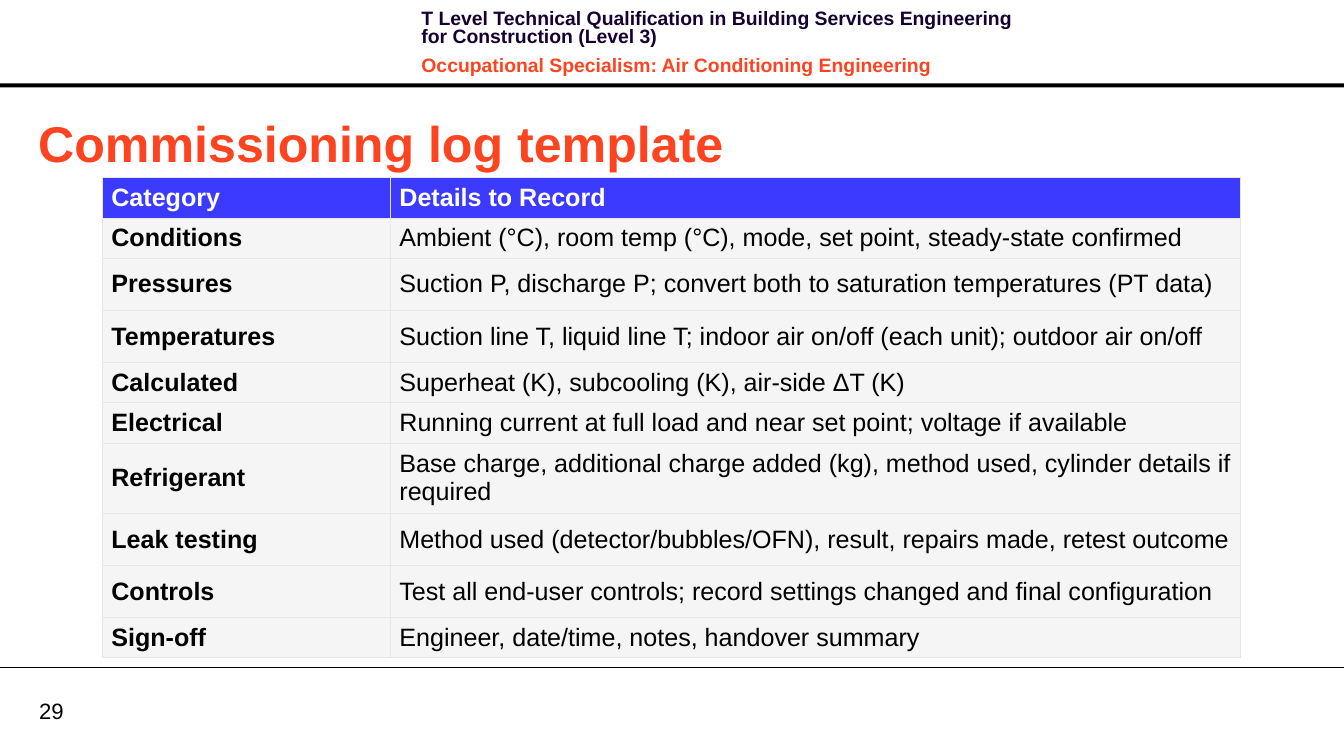
"""Build the commissioning log template slide."""
from dataclasses import dataclass

from lxml.etree import SubElement
from pptx import Presentation
from pptx.dml.color import RGBColor as RGB
from pptx.enum.shapes import MSO_CONNECTOR as CONNECTOR, MSO_SHAPE as SHAPE
from pptx.enum.text import MSO_ANCHOR as ANCHOR, MSO_AUTO_SIZE as AUTO, PP_ALIGN as ALIGN
from pptx.oxml import parse_xml
from pptx.oxml.ns import nsdecls, qn
from pptx.util import Pt

PX = 9144
WIDTH, HEIGHT = 1339, 748


@dataclass(frozen=True)
class Theme:
    """Colours and type sizes of the slide."""
    font: str = "Arial"
    black: str = "000000"
    white: str = "FFFFFF"
    navy: str = "170130"
    orange: str = "FC4421"
    blue: str = "3C3AFE"
    grey: str = "F5F5F5"
    border: str = "E6E6E6"
    title_size: float = 36
    table_size: float = 18
    number_size: float = 15.9
    header_size: float = 13.9


@dataclass(frozen=True)
class Box:
    """A rectangle in px."""
    left: int
    top: int
    width: int
    height: int

    def emu(self) -> tuple[int, int, int, int]:
        """Return the rectangle in EMU."""
        return self.left * PX, self.top * PX, self.width * PX, self.height * PX


@dataclass(frozen=True)
class LogRow:
    """One row of the log table."""
    category: str
    details: str
    height: int = 36


THEME = Theme()
COLUMNS = (287, 847)
LOG = (
    LogRow("Category", "Details to Record"),
    LogRow("Conditions", "Ambient (°C), room temp (°C), mode, set point, steady‑state confirmed"),
    LogRow("Pressures", "Suction P, discharge P; convert both to saturation temperatures (PT data)", 52),
    LogRow("Temperatures",
           "Suction line T, liquid line T; indoor air on/off (each unit); outdoor air on/off", 52),
    LogRow("Calculated", "Superheat (K), subcooling (K), air‑side ΔT (K)"),
    LogRow("Electrical", "Running current at full load and near set point; voltage if available"),
    LogRow("Refrigerant",
           "Base charge, additional charge added (kg), method used, cylinder details if required", 63),
    LogRow("Leak testing", "Method used (detector/bubbles/OFN), result, repairs made, retest outcome", 52),
    LogRow("Controls", "Test all end‑user controls; record settings changed and final configuration", 52),
    LogRow("Sign‑off", "Engineer, date/time, notes, handover summary"),
)
HEADINGS = (
    ("T Level Technical Qualification in Building Services Engineering for Construction (Level 3)",
     THEME.navy),
    ("Occupational Specialism: Air Conditioning Engineering", THEME.orange),
)


def set_font(p, size: float, color: str, bold: bool = False) -> None:
    """Format a whole paragraph."""
    p.font.name, p.font.size, p.font.bold = THEME.font, Pt(size), bold
    p.font.color.rgb = RGB.from_string(color)


def set_margins(tf, x: int, y: int) -> None:
    """Set the insets of a text frame or cell in px."""
    tf.margin_left = tf.margin_right = x * PX
    tf.margin_top = tf.margin_bottom = y * PX


def add_rules(s) -> None:
    """Draw the thick header bar and the thin footer line."""
    bar = s.shapes.add_shape(SHAPE.RECTANGLE, *Box(0, 83, WIDTH, 4).emu())
    bar.shadow.inherit = False
    bar.fill.solid()
    bar.fill.fore_color.rgb = RGB.from_string(THEME.black)
    bar.line.fill.background()
    y = 665 * PX
    line = s.shapes.add_connector(CONNECTOR.STRAIGHT, 0, y, WIDTH * PX, y)
    line.line.width = Pt(0.75)
    line.line.color.rgb = RGB.from_string(THEME.black)
    SubElement(line._element.spPr, qn("a:effectLst"))


def add_header(s) -> None:
    """Write the two course headings."""
    tf = s.shapes.add_textbox(*Box(410, 6, 619, 64).emu()).text_frame
    tf.word_wrap = True
    set_margins(tf, 10, 5)
    for i, (text, color) in enumerate(HEADINGS):
        p = tf.add_paragraph() if i else tf.paragraphs[0]
        p.text = text
        p.line_spacing = Pt(13)
        p.space_before, p.space_after = Pt(4 if i else 0), Pt(4)
        set_font(p, THEME.header_size, color, True)


def add_page_number(s) -> None:
    """Write the page number at the bottom left."""
    tf = s.shapes.add_textbox(*Box(39, 694, 64, 27).emu()).text_frame
    tf.word_wrap = True
    tf.vertical_anchor = ANCHOR.MIDDLE
    set_margins(tf, 0, 0)
    tf.text = "29"
    set_font(tf.paragraphs[0], THEME.number_size, THEME.black)


def set_title(s) -> None:
    """Place and format the title placeholder."""
    title = s.shapes.title
    title.left, title.top, title.width, title.height = Box(28, 106, 1147, 71).emu()
    tf = title.text_frame
    tf.text = "Commissioning log template"
    tf.auto_size = AUTO.NONE
    tf.vertical_anchor = ANCHOR.BOTTOM
    set_margins(tf, 10, 5)
    tf.paragraphs[0].alignment = ALIGN.LEFT
    set_font(tf.paragraphs[0], THEME.title_size, THEME.orange, True)


def format_cell(cell, text: str, is_header: bool, bold: bool) -> None:
    """Fill, outline and label one table cell."""
    cell.text = text
    cell.vertical_anchor = ANCHOR.MIDDLE
    set_margins(cell, 9, 5)
    set_font(cell.text_frame.paragraphs[0], THEME.table_size,
             THEME.white if is_header else THEME.black, bold)
    for side in "LRTB":
        cell._tc.get_or_add_tcPr().append(parse_xml(
            f'<a:ln{side} {nsdecls("a")} w="{Pt(0.5)}"><a:solidFill>'
            f'<a:srgbClr val="{THEME.border}"/></a:solidFill></a:ln{side}>'))
    cell.fill.solid()
    cell.fill.fore_color.rgb = RGB.from_string(THEME.blue if is_header else THEME.grey)


def add_log_table(s) -> None:
    """Draw the log table."""
    box = Box(102, 177, sum(COLUMNS), sum(row.height for row in LOG))
    table = s.shapes.add_table(len(LOG), len(COLUMNS), *box.emu()).table
    for column, width in zip(table.columns, COLUMNS):
        column.width = width * PX
    for i, row in enumerate(LOG):
        table.rows[i].height = row.height * PX
        for j, text in enumerate((row.category, row.details)):
            format_cell(table.cell(i, j), text, i == 0, i == 0 or j == 0)


def main() -> None:
    """Build and save the presentation."""
    prs = Presentation()
    prs.slide_width, prs.slide_height = WIDTH * PX, HEIGHT * PX
    s = prs.slides.add_slide(prs.slide_layouts[5])
    add_rules(s)
    add_header(s)
    add_page_number(s)
    set_title(s)
    add_log_table(s)
    prs.save("out.pptx")


if __name__ == "__main__":
    main()
